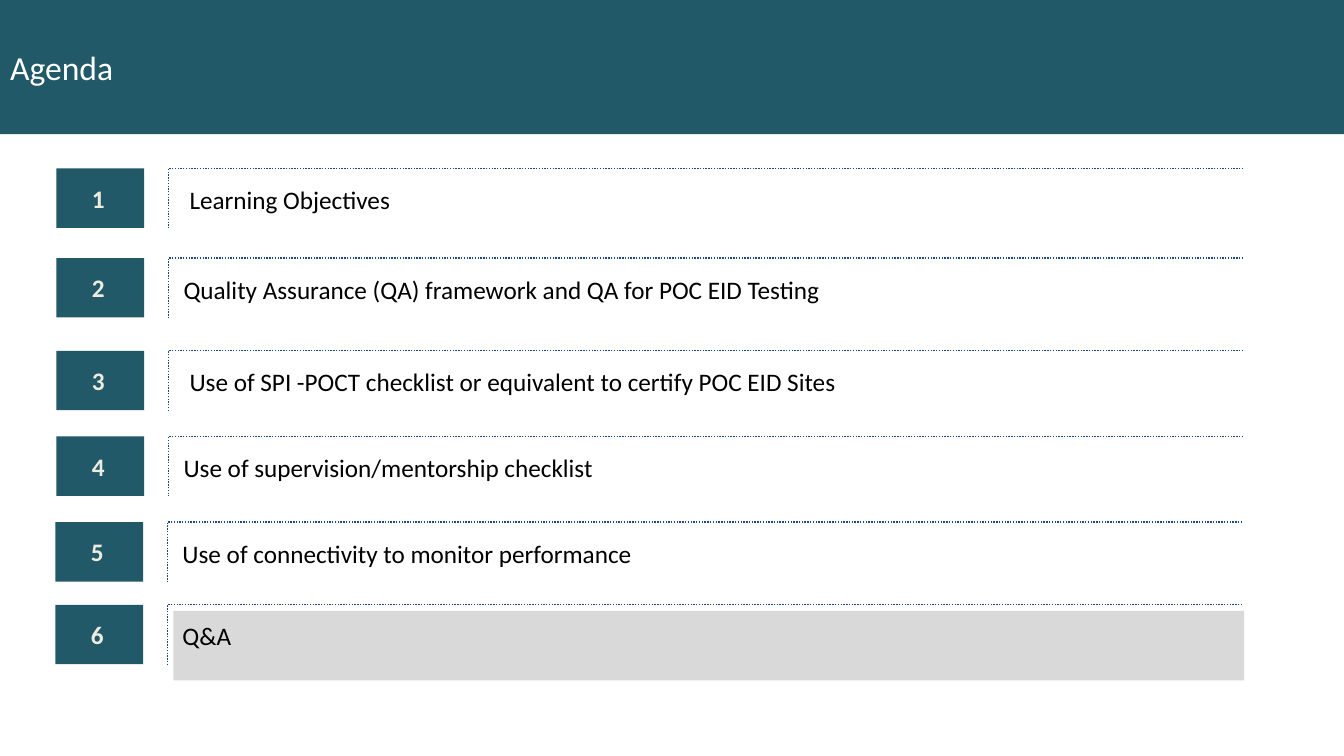
from pptx import Presentation, util as u
from pptx.dml.color import RGBColor
from pptx.enum import dml, shapes, text

TEAL = "215968"
AGENDA = [
    (0.56, 1.67, 0.06, "Learning Objectives"),
    (0.56, 2.56, 0, "Quality Assurance (QA) framework and QA for POC EID Testing"),
    (0.56, 3.48, 0.06, "Use of SPI -POCT checklist or equivalent to certify POC EID Sites"),
    (0.56, 4.33, 0, "Use of supervision/mentorship checklist"),
    (0.55, 5.18, 0, "Use of connectivity to monitor performance"),
    (0.55, 6.0, 0, "Q&A"),
]


def set_color(target, value):
    """Apply a hex colour to a fill, a line fill or a font."""
    if hasattr(target, "solid"):
        target.solid()
        target.fore_color.rgb = RGBColor.from_string(value)
    else:
        target.color.rgb = RGBColor.from_string(value)


def set_values(target, values):
    """Set each named attribute of the target."""
    for name, value in values.items():
        setattr(target, name, value)


def lengths(*values):
    """Turn inch values into lengths."""
    return [u.Inches(value) for value in values]


def write(box, content, color, frame, para, font):
    """Write one formatted line of text into a box."""
    set_values(box.text_frame, {"word_wrap": True, **frame})
    line = box.text_frame.paragraphs[0]
    set_values(line, para)
    span = line.add_run()
    span.text = content
    set_values(span.font, {"name": "Calibri", **font})
    set_color(span.font, color)


def add_block(page, left, top, width, height, color):
    """Add a plain filled rectangle."""
    block = page.shapes.add_shape(shapes.MSO_SHAPE.RECTANGLE,
                                  *lengths(left, top, width, height))
    block.shadow.inherit = False
    set_color(block.fill, color)
    block.line.fill.background()
    return block


def add_header(page, left, top, width, height):
    """Turn the title placeholder into the header band."""
    title = page.shapes.title
    names = ("left", "top", "width", "height")
    set_values(title, dict(zip(names, lengths(left, top, width, height))))
    set_color(title.fill, TEAL)
    write(title, "Agenda", "FFFFFF",
          {"vertical_anchor": text.MSO_ANCHOR.MIDDLE, "auto_size": text.MSO_AUTO_SIZE.NONE},
          {"alignment": text.PP_ALIGN.LEFT}, {"size": u.Pt(24)})


def add_bracket(page, left, top, width, height):
    """Draw the dotted line along the top and left of an agenda row."""
    builder = page.shapes.build_freeform(*lengths(left + width, top))
    builder.add_line_segments([lengths(left, top), lengths(left, top + height)], close=False)
    bracket = builder.convert_to_shape()
    bracket.shadow.inherit = False
    bracket.fill.background()
    set_color(bracket.line.fill, "1F497D")
    set_values(bracket.line, {"width": u.Pt(1), "dash_style": dml.MSO_LINE.ROUND_DOT})


def add_agenda_row(page, left, top, height, number, indent, topic):
    """Place the number, topic and dotted bracket of one agenda row."""
    badge = add_block(page, left, top, 0.87, height, TEAL)
    write(badge, str(number), "EEECE1",
          {"vertical_anchor": text.MSO_ANCHOR.MIDDLE, "margin_left": u.Inches(0.06)},
          {"alignment": text.PP_ALIGN.CENTER}, {"size": u.Pt(18), "bold": True})
    label = page.shapes.add_textbox(*lengths(left + 1.26, top + 0.18, 9.91, 0.29))
    write(label, topic, "000000",
          {"margin_left": u.Inches(indent), "margin_top": 0, "margin_right": 0,
           "margin_bottom": 0, "auto_size": text.MSO_AUTO_SIZE.SHAPE_TO_FIT_TEXT},
          {"line_spacing": 0.95}, {"size": u.Pt(18)})
    add_bracket(page, left + 1.11, top, 10.66, height)


def main():
    """Build the agenda slide."""
    deck = Presentation()
    set_values(deck, {"slide_width": u.Inches(13.33), "slide_height": u.Inches(7.5)})
    page = deck.slides.add_slide(deck.slide_layouts.get_by_name("Title Only"))
    add_header(page, 0, 0, 13.33, 1.33)
    add_block(page, 1.72, 6.06, 10.62, 0.69, "D9D9D9")
    for number, (left, top, indent, topic) in enumerate(AGENDA, 1):
        add_agenda_row(page, left, top, 0.59, number, indent, topic)
    deck.save("out.pptx")


if __name__ == "__main__":
    main()
